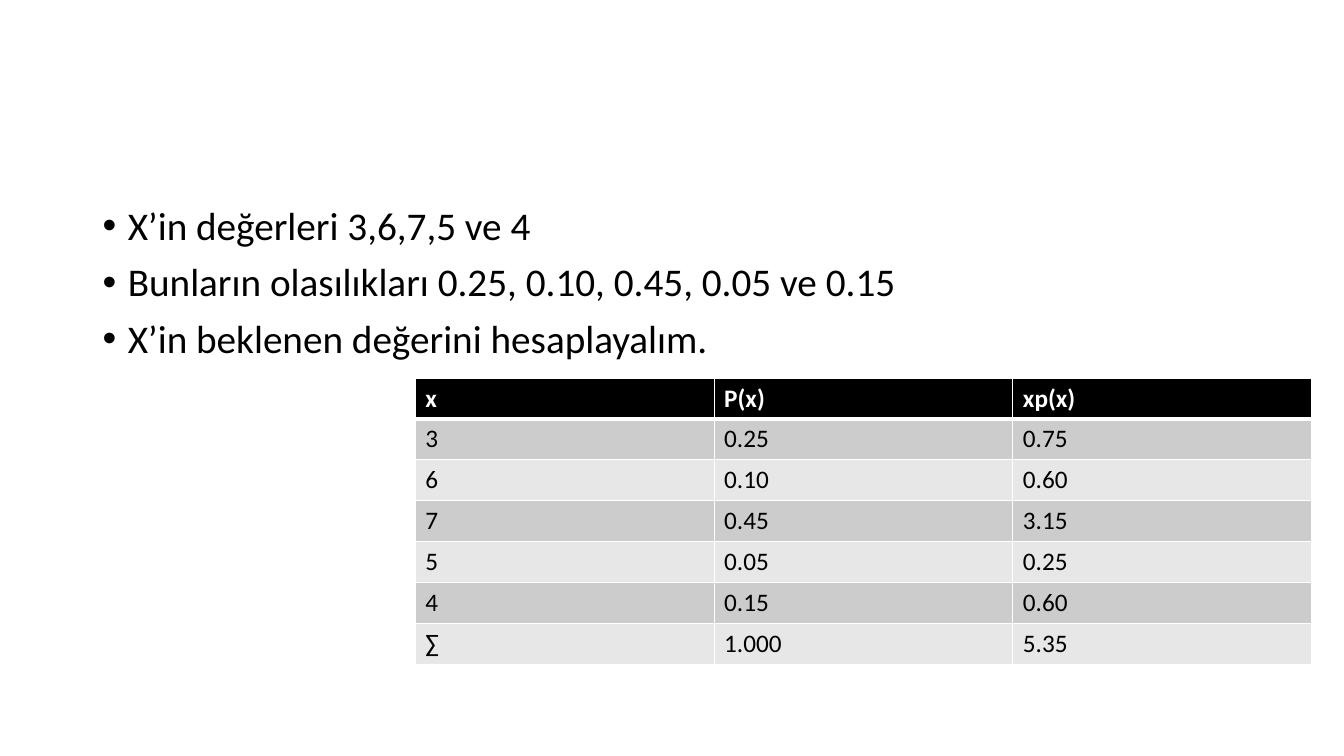
from typing import NamedTuple

from lxml import etree
from pptx import Presentation
from pptx.dml.color import RGBColor
from pptx.oxml.ns import qn
from pptx.util import Inches, Pt

FONT = "Calibri"
BLACK, WHITE = "000000", "FFFFFF"
BANDS = ("CCCCCC", "E7E7E7")


class Row(NamedTuple):
    x: str
    prob: str
    term: str


POINTS = (
    "X’in değerleri 3,6,7,5 ve 4",
    "Bunların olasılıkları 0.25, 0.10, 0.45, 0.05 ve 0.15",
    "X’in beklenen değerini hesaplayalım.",
)
ROWS = (
    Row("x", "P(x)", "xp(x)"),
    Row("3", "0.25", "0.75"),
    Row("6", "0.10", "0.60"),
    Row("7", "0.45", "3.15"),
    Row("5", "0.05", "0.25"),
    Row("4", "0.15", "0.60"),
    Row("∑", "1.000", "5.35"),
)


def color(code: str) -> RGBColor:
    return RGBColor.from_string(code)


def add_run(para, text: str, size: float, code: str, bold: bool = False) -> None:
    run = para.add_run()
    run.text = text
    font = run.font
    font.name, font.size, font.bold = FONT, Pt(size), bold
    font.color.rgb = color(code)


def add_bullet(para) -> None:
    props = para._p.get_or_add_pPr()
    props.set("marL", str(Inches(0.25)))
    props.set("indent", str(Inches(-0.25)))
    etree.SubElement(props, qn("a:buFont"), typeface="Arial")
    etree.SubElement(props, qn("a:buChar"), char="•")


def add_edge(cell, side: str, width: float) -> None:
    props = cell._tc.get_or_add_tcPr()
    line = etree.SubElement(props, qn(f"a:ln{side}"), w=str(Pt(width)))
    fill = etree.SubElement(line, qn("a:solidFill"))
    etree.SubElement(fill, qn("a:srgbClr"), val=WHITE)


def add_points(slide) -> None:
    box = slide.shapes.add_textbox(Inches(0.92), Inches(2), Inches(11.5), Inches(4.76))
    frame = box.text_frame
    frame.word_wrap = True
    for i, text in enumerate(POINTS):
        para = frame.add_paragraph() if i else frame.paragraphs[0]
        para.line_spacing = 0.9
        para.space_before = Pt(10)
        add_bullet(para)
        add_run(para, text, 28, BLACK)


def add_grid(slide) -> None:
    wide, high = Inches(8.89), Inches(2.84)
    frame = slide.shapes.add_table(
        len(ROWS), len(Row._fields), Inches(4.12), Inches(3.75), wide, high
    )
    table = frame.table
    for i, row in enumerate(ROWS):
        head = i == 0
        for j, text in enumerate(row):
            cell = table.cell(i, j)
            # Borders: a thick line parts the header from the body
            for side in "LRTB":
                thick = (i, side) in ((0, "B"), (1, "T"))
                add_edge(cell, side, 3 if thick else 1)
            cell.fill.solid()
            cell.fill.fore_color.rgb = color(BLACK if head else BANDS[(i - 1) % 2])
            add_run(cell.text_frame.paragraphs[0], text, 18, WHITE if head else BLACK, head)


def main() -> None:
    deck = Presentation()
    deck.slide_width, deck.slide_height = Inches(13.33), Inches(7.5)
    slide = deck.slides.add_slide(deck.slide_layouts[6])
    # Bulleted statement of the problem
    add_points(slide)
    # Expected value table
    add_grid(slide)
    deck.save("out.pptx")


if __name__ == "__main__":
    main()
